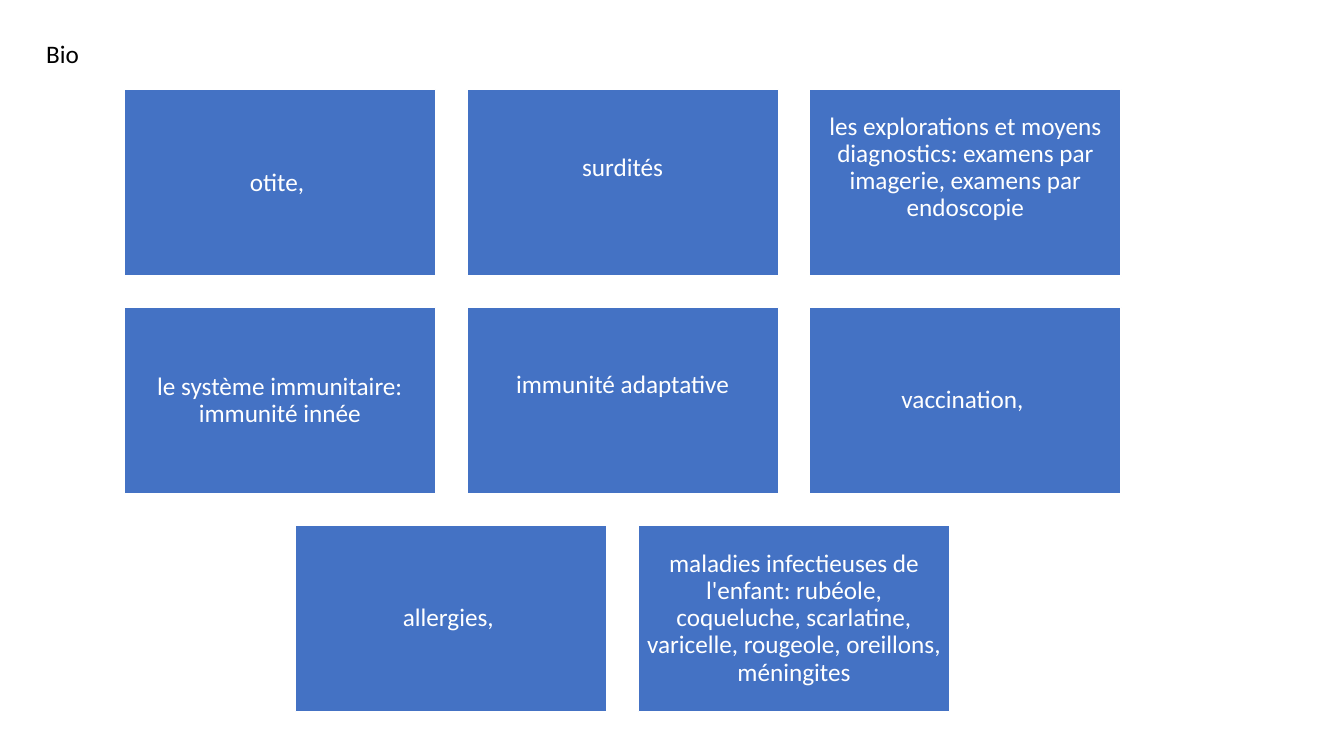
from pptx import Presentation, util as u
from pptx.dml.color import RGBColor
from pptx.enum import shapes, text

WHITE = RGBColor(0xFF, 0xFF, 0xFF)
BLACK = RGBColor(0x00, 0x00, 0x00)
BLUE = RGBColor(0x44, 0x72, 0xC4)

# A "\v" is a line break inside the paragraph.
TOPICS = [
    ["otite, ", "surdités\v",
     "les explorations et moyens diagnostics: examens par imagerie, "
     "examens par endoscopie\v"],
    ["le système immunitaire: immunité innée", "immunité adaptative\v",
     "vaccination, "],
    ["allergies, ",
     "maladies infectieuses de l'enfant: rubéole, coqueluche, scarlatine, "
     "varicelle, rougeole, oreillons, méningites"],
]


class TopicSlide:
    FONT, SIZE = "Calibri", u.Pt(18)
    LEFT, TOP = u.Inches(1.23), u.Inches(0.89)
    BOX_W, BOX_H = u.Inches(3.09), u.Inches(1.85)
    GAP = u.Inches(0.31)
    INSET = u.Inches(0.07)
    COLUMNS = 3

    def __init__(self, prs):
        self.s = prs.slides.add_slide(prs.slide_layouts[6])

    def set_text(self, tf, words, color):
        tf.word_wrap = True
        p = tf.paragraphs[0]
        p.text = words
        p.font.name, p.font.size = self.FONT, self.SIZE
        p.font.color.rgb = color
        return p

    def title(self, words):
        sp = self.s.shapes.add_textbox(
            u.Inches(0.36), u.Inches(0.33), u.Inches(1.48), u.Inches(0.4))
        self.set_text(sp.text_frame, words, BLACK)
        sp.text_frame.auto_size = text.MSO_AUTO_SIZE.SHAPE_TO_FIT_TEXT

    def box(self, column, row, words):
        sp = self.s.shapes.add_shape(
            shapes.MSO_SHAPE.RECTANGLE,
            int(self.LEFT + column * (self.BOX_W + self.GAP)),
            self.TOP + row * (self.BOX_H + self.GAP),
            self.BOX_W, self.BOX_H)
        sp.shadow.inherit = False
        sp.fill.solid()
        sp.fill.fore_color.rgb = BLUE
        sp.line.color.rgb = WHITE
        sp.line.width = u.Pt(1)
        tf = sp.text_frame
        tf.margin_left = tf.margin_right = self.INSET
        tf.margin_top = tf.margin_bottom = self.INSET
        tf.vertical_anchor = text.MSO_ANCHOR.MIDDLE
        p = self.set_text(tf, words, WHITE)
        p.alignment = text.PP_ALIGN.CENTER
        p.line_spacing = 0.9

    def grid(self, rows):
        """Place the rows of boxes, centring any row that is not full."""
        for row, topics in enumerate(rows):
            first = (self.COLUMNS - len(topics)) / 2
            for i, words in enumerate(topics):
                self.box(first + i, row, words)


def main():
    prs = Presentation()
    prs.slide_width, prs.slide_height = u.Inches(13.33), u.Inches(7.5)
    slide = TopicSlide(prs)
    slide.grid(TOPICS)
    slide.title("Bio")
    prs.save("out.pptx")


if __name__ == "__main__":
    main()
